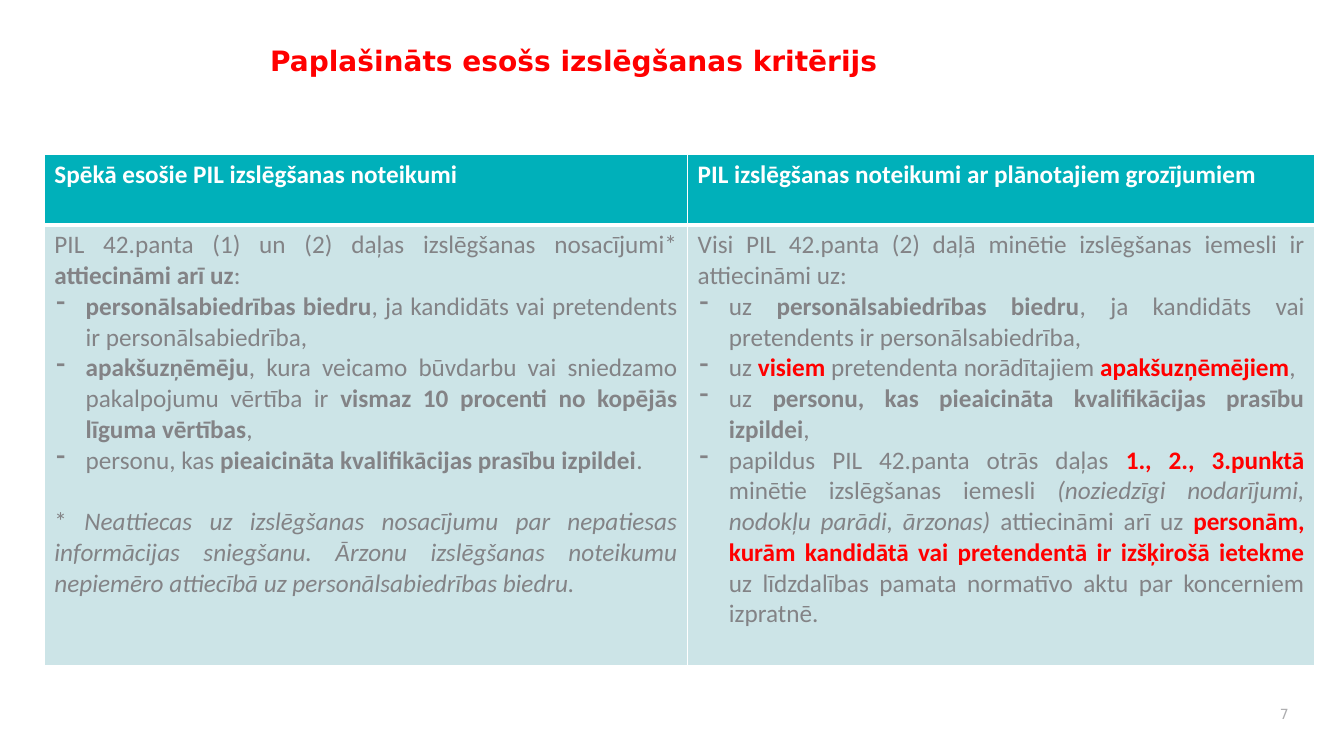
from lxml import etree
from pptx import Presentation
from pptx.dml.color import RGBColor
from pptx.enum.text import MSO_ANCHOR, PP_ALIGN
from pptx.oxml.ns import qn
from pptx.util import Inches, Pt

JUSTIFY, RIGHT = PP_ALIGN.JUSTIFY, PP_ALIGN.RIGHT
TOP, MIDDLE = MSO_ANCHOR.TOP, MSO_ANCHOR.MIDDLE
COLORS = {"accent": "FF0000", "header": "00B0BA", "body": "CCE4E7",
          "text": "838386", "white": "FFFFFF", "number": "ADADAF"}
TITLE_FONT, TABLE_FONT = "DejaVu Sans", "Calibri"
INDENT = Inches(0.31)
PLAIN, BOLD, ITALIC, RED = "plain", "bold", "italic", "red"

HEADINGS = ["Spēkā esošie PIL izslēgšanas noteikumi",
            "PIL izslēgšanas noteikumi ar plānotajiem grozījumiem"]
CURRENT_RULES = {
    "intro": [("PIL 42.panta (1) un (2) daļas izslēgšanas nosacījumi* ", PLAIN),
              ("attiecināmi arī uz", BOLD), (":", PLAIN)],
    "points": [
        [("personālsabiedrības biedru", BOLD),
         (", ja kandidāts vai pretendents ir personālsabiedrība,", PLAIN)],
        [("apakšuzņēmēju", BOLD),
         (", kura veicamo būvdarbu vai sniedzamo pakalpojumu vērtība ir ", PLAIN),
         ("vismaz 10 procenti no kopējās līguma vērtības", BOLD), (",", PLAIN)],
        [("personu, kas ", PLAIN),
         ("pieaicināta kvalifikācijas prasību izpildei", BOLD), (".", PLAIN)],
    ],
    "footnote": [("* ", PLAIN),
                 ("Neattiecas uz izslēgšanas nosacījumu par nepatiesas informācijas "
                  "sniegšanu. Ārzonu izslēgšanas noteikumu nepiemēro attiecībā uz "
                  "personālsabiedrības biedru.", ITALIC)],
}
PLANNED_RULES = {
    "intro": [("Visi PIL 42.panta (2) daļā minētie izslēgšanas iemesli ir "
               "attiecināmi uz:", PLAIN)],
    "points": [
        [("uz ", PLAIN), ("personālsabiedrības biedru", BOLD),
         (", ja kandidāts vai pretendents ir personālsabiedrība,", PLAIN)],
        [("uz ", PLAIN), ("visiem", RED), (" pretendenta norādītajiem ", PLAIN),
         ("apakšuzņēmējiem", RED), (",", PLAIN)],
        [("uz ", PLAIN),
         ("personu, kas pieaicināta kvalifikācijas prasību izpildei", BOLD),
         (",", PLAIN)],
        [("papildus PIL 42.panta otrās daļas ", PLAIN), ("1., 2., 3.punktā", RED),
         (" minētie izslēgšanas iemesli ", PLAIN),
         ("(noziedzīgi nodarījumi, nodokļu parādi, ārzonas) ", ITALIC),
         ("attiecināmi arī uz ", PLAIN),
         ("personām, kurām kandidātā vai pretendentā ir izšķirošā ietekme", RED),
         (" uz līdzdalības pamata normatīvo aktu par koncerniem izpratnē.", PLAIN)],
    ],
}


def color(name):
    return RGBColor.from_string(COLORS[name])


def set_font(font, name, size, color_name, bold=None):
    font.name, font.size, font.bold = name, Pt(size), bold
    font.color.rgb = color(color_name)


def add_label(slide, box, text, size, color_name, bold=False, anchor=TOP):
    frame = slide.shapes.add_textbox(*map(Inches, box)).text_frame
    frame.word_wrap = True
    frame.vertical_anchor = anchor
    label = frame.paragraphs[0]
    label.text = text
    set_font(label.font, TITLE_FONT, size, color_name, bold)
    return label


def add_title(slide, box):
    title = add_label(slide, box, "Paplašināts esošs izslēgšanas kritērijs",
                      20, "accent", bold=True)
    title.line_spacing = 0.9


def add_page_number(slide, box):
    number = add_label(slide, box, "7", 10, "number", anchor=MIDDLE)
    number.alignment = RIGHT


def set_borders(cell, widths):
    properties = cell._tc.get_or_add_tcPr()
    for position, (side, width) in enumerate(zip("LRTB", widths)):
        line = etree.Element(qn(f"a:ln{side}"), w=str(Pt(width)))
        fill = etree.SubElement(line, qn("a:solidFill"))
        etree.SubElement(fill, qn("a:srgbClr"), val=COLORS["white"])
        properties.insert(position, line)


def add_dash(paragraph):
    properties = paragraph._p.get_or_add_pPr()
    properties.set("marL", str(INDENT))
    properties.set("indent", str(-INDENT))
    etree.SubElement(properties, qn("a:buChar"), char="⁃")


def write_runs(paragraph, pieces):
    paragraph.alignment = JUSTIFY
    set_font(paragraph.font, TABLE_FONT, 18, "text")
    for text, style in pieces:
        run = paragraph.add_run()
        run.text = text
        run.font.bold = style in (BOLD, RED)
        run.font.italic = style == ITALIC
        if style == RED:
            run.font.color.rgb = color("accent")


def write_rules(cell, rules):
    frame = cell.text_frame
    write_runs(frame.paragraphs[0], rules["intro"])
    for point in rules["points"]:
        paragraph = frame.add_paragraph()
        add_dash(paragraph)
        write_runs(paragraph, point)
    if "footnote" in rules:
        footnote = frame.add_paragraph()
        footnote.space_before = Pt(22)
        write_runs(footnote, rules["footnote"])


def fill_cell(cell, color_name, borders):
    cell.fill.solid()
    cell.fill.fore_color.rgb = color(color_name)
    set_borders(cell, borders)


def add_comparison(slide, box):
    left, top, width, height = box
    table = slide.shapes.add_table(2, 2, *map(Inches, box)).table
    left_width, header_height = 6.38, 0.7
    table.columns[0].width = Inches(left_width)
    table.columns[1].width = Inches(width - left_width)
    table.rows[0].height = Inches(header_height)
    table.rows[1].height = Inches(height - header_height)
    for column, (heading, rules) in enumerate(
            zip(HEADINGS, (CURRENT_RULES, PLANNED_RULES))):
        header, body = table.cell(0, column), table.cell(1, column)
        fill_cell(header, "header", (1, 1, 1, 3))
        fill_cell(body, "body", (1, 1, 3, 1))
        title = header.text_frame.paragraphs[0]
        title.text = heading
        set_font(title.font, TABLE_FONT, 18, "white", bold=True)
        write_rules(body, rules)


def main():
    presentation = Presentation()
    presentation.slide_width = Inches(13.33)
    presentation.slide_height = Inches(7.5)
    slide = presentation.slides.add_slide(presentation.slide_layouts[6])
    add_title(slide, (2.58, 0.42, 10.09, 1.13))
    add_comparison(slide, (0.44, 1.53, 12.6, 5.07))
    add_page_number(slide, (12.27, 6.92, 0.61, 0.33))
    presentation.save("out.pptx")


if __name__ == "__main__":
    main()
